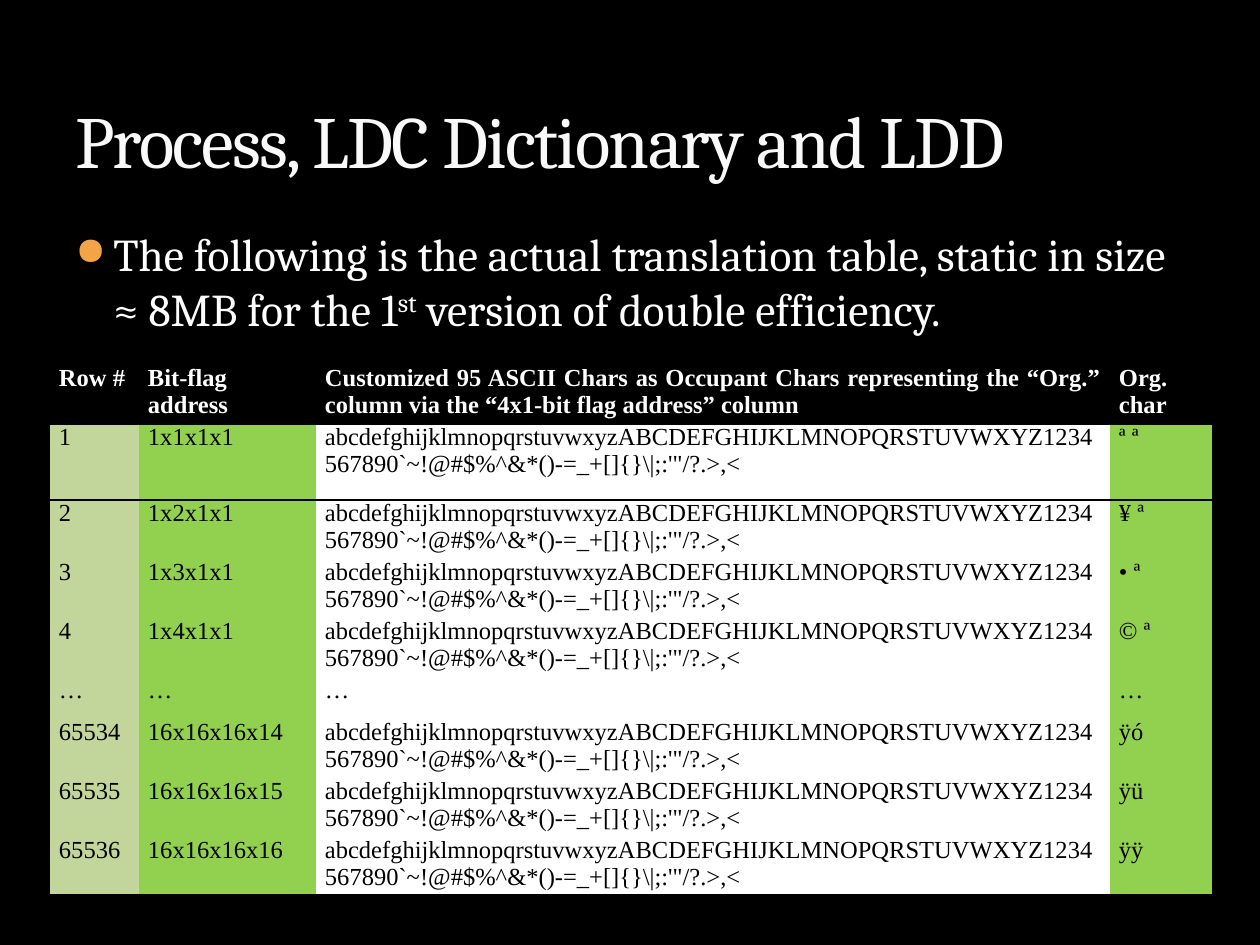
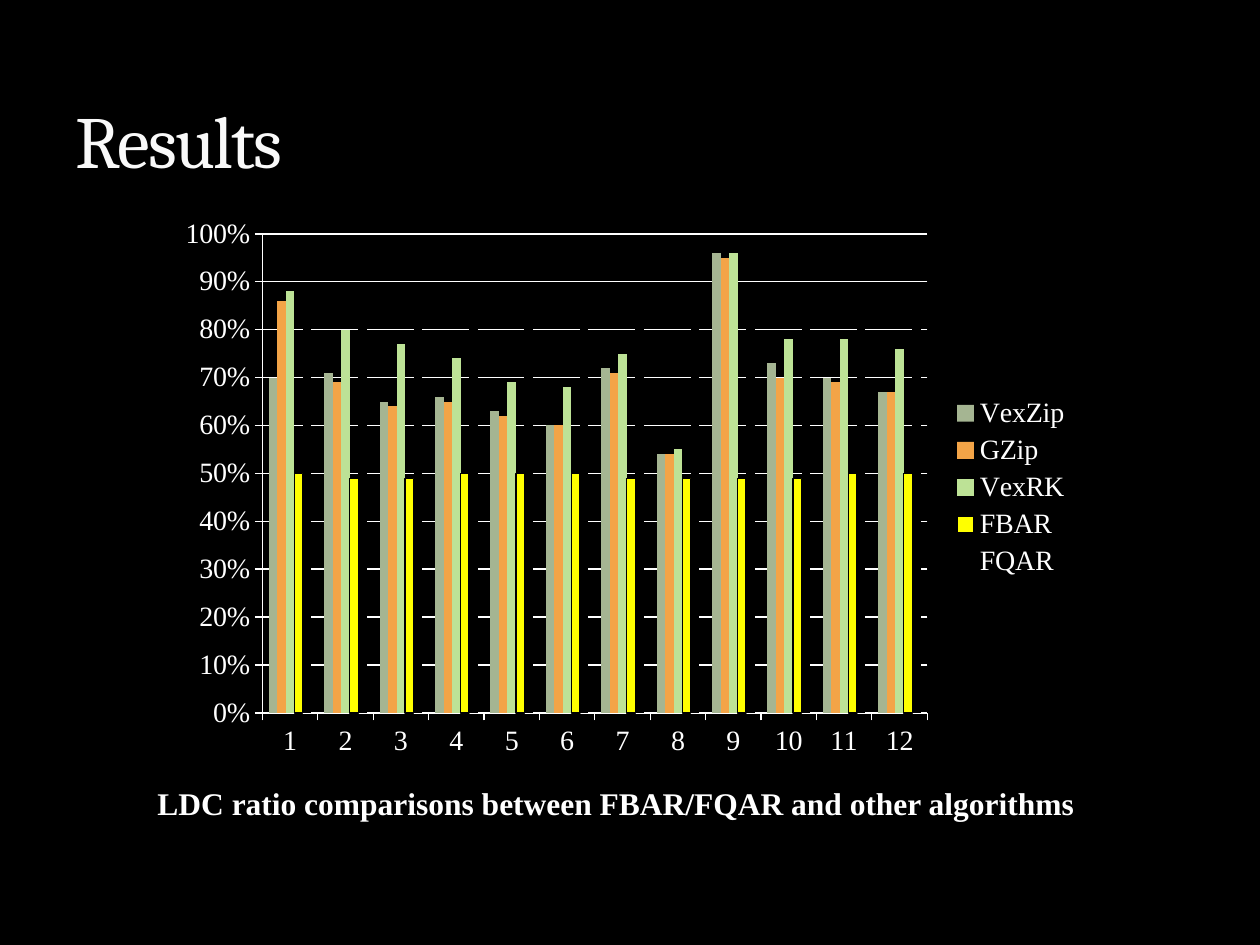
from lxml import etree
from pptx import Presentation
from pptx.chart.data import CategoryChartData
from pptx.dml.color import RGBColor
from pptx.enum.chart import XL_CHART_TYPE, XL_LEGEND_POSITION, XL_TICK_MARK
from pptx.enum.text import MSO_ANCHOR, PP_ALIGN
from pptx.oxml import parse_xml
from pptx.oxml.ns import nsdecls, qn
from pptx.util import Pt

SERIF, TIMES = "Cambria", "Times New Roman"
BLACK, WHITE, TITLE_COLOR, ACCENT = "000000", "FFFFFF", "F9F9F9", "F3A447"
TITLE_OUTLINE = "3C4422"
NO_STYLE = "{2D5ABB26-0587-4C30-8999-92F81FD0307C}"

TITLE_BOX = (63, 21, 1134, 168)
BODY_BOX = (63, 220, 1134, 686)
TABLE_POS = (50, 365)
CHART_BOX = (168, 207, 916, 561)
PLOT_BOX = (262, 234, 665, 479)
CAPTION_BOX = (88, 777, 1064, 51)

TABLE_TITLE = "Process, LDC Dictionary and LDD"
INTRO = [
    ("The following is the actual translation table, static in size ≈ 8MB for the 1", False),
    ("st", True),
    (" version of double efficiency.", False),
]
CHARS = ("abcdefghijklmnopqrstuvwxyzABCDEFGHIJKLMNOPQRSTUVWXYZ"
         "1234567890`~!@#$%^&*()-=_+[]{}\\|;:'\"/?.>,<")
HEADER = (
    "Row #",
    "Bit-flag address",
    "Customized 95 ASCII Chars as Occupant Chars representing the “Org.” column "
    "via the “4x1-bit flag address” column",
    "Org. char",
)
ROWS = [
    ("1", "1x1x1x1", CHARS, "ª ª"),
    ("2", "1x2x1x1", CHARS, "¥ ª"),
    ("3", "1x3x1x1", CHARS, "• ª"),
    ("4", "1x4x1x1", CHARS, "© ª"),
    ("…", "…", "…", "…"),
    ("65534", "16x16x16x14", CHARS, "ÿó"),
    ("65535", "16x16x16x15", CHARS, "ÿü"),
    ("65536", "16x16x16x16", CHARS, "ÿÿ"),
]
COL_WIDTHS = (89, 177, 794, 102)
COL_FILLS = ("C2D69B", "92D050", WHITE, "92D050")
ROW_HEIGHT, FIRST_ROW_HEIGHT = 42, 76

CHART_TITLE = "Results"
CAPTION = "LDC ratio comparisons between FBAR/FQAR and other algorithms "
SERIES = [
    ("VexZip", "A5B592", (0.7, 0.71, 0.65, 0.66, 0.63, 0.6, 0.72, 0.54, 0.96, 0.73, 0.7, 0.67)),
    ("GZip", ACCENT, (0.86, 0.69, 0.64, 0.65, 0.62, 0.6, 0.71, 0.54, 0.95, 0.7, 0.69, 0.67)),
    ("VexRK", "BDE296", (0.88, 0.8, 0.77, 0.74, 0.69, 0.68, 0.75, 0.55, 0.96, 0.78, 0.78, 0.76)),
    ("FBAR", "FFFF00", (0.5, 0.49, 0.49, 0.5, 0.5, 0.5, 0.49, 0.49, 0.49, 0.49, 0.5, 0.5)),
    ("FQAR", BLACK, (0.88, 0.87, 0.86, 0.88, 0.88, 0.88, 0.86, 0.87, 0.86, 0.86, 0.88, 0.88)),
]


def px(n):
    return round(n * 914400 / 126)


def rgb(color):
    return RGBColor.from_string(color)


def set_font(font, name, size, color, bold=False):
    font.name, font.size, font.bold = name, Pt(size), bold
    font.color.rgb = rgb(color)


def add_slide(prs, title):
    s = prs.slides.add_slide(prs.slide_layouts[6])
    s.background.fill.solid()
    s.background.fill.fore_color.rgb = rgb(BLACK)
    p = add_text(s, TITLE_BOX, [(title, False)], MSO_ANCHOR.BOTTOM)
    set_font(p.font, SERIF, 42, TITLE_COLOR)
    rPr = p.runs[0].font._element if hasattr(p.runs[0].font, "_element") else p.runs[0]._r.get_or_add_rPr()
    rPr.set("spc", "-100")
    rPr.insert(0, parse_xml(
        f'<a:ln {nsdecls("a")} w="3175"><a:solidFill><a:srgbClr val="{TITLE_OUTLINE}">'
        '<a:alpha val="25000"/></a:srgbClr></a:solidFill></a:ln>'))
    return s


def add_text(s, box, runs, anchor):
    tf = s.shapes.add_textbox(*map(px, box)).text_frame
    tf.word_wrap, tf.vertical_anchor = True, anchor
    p = tf.paragraphs[0]
    for text, raised in runs:
        r = p.add_run()
        r.text = text
        if raised:
            r._r.get_or_add_rPr().set("baseline", "30000")
    return p


def add_bullet(p, indent):
    pPr = p._p.get_or_add_pPr()
    pPr.set("marL", str(px(indent)))
    pPr.set("indent", str(-px(indent)))
    bullet = parse_xml(
        f'<a:pPr {nsdecls("a")}><a:buClr><a:srgbClr val="{ACCENT}"/></a:buClr>'
        '<a:buSzPct val="85000"/><a:buChar char="●"/></a:pPr>')
    defRPr = pPr.find(qn("a:defRPr"))
    for el in list(bullet):
        defRPr.addprevious(el)


def add_border(cell, sides):
    tcPr = cell._tc.get_or_add_tcPr()
    for side in sides:
        ln = etree.SubElement(tcPr, qn(f"a:ln{side}"), w="12700")
        fill = etree.SubElement(ln, qn("a:solidFill"))
        etree.SubElement(fill, qn("a:srgbClr"), val=BLACK)


def fill_cell(cell, text, fill, color, bold, sides):
    cell.margin_left = cell.margin_right = px(9)
    cell.margin_top = cell.margin_bottom = 0
    add_border(cell, sides)
    cell.fill.solid()
    cell.fill.fore_color.rgb = rgb(fill)
    p = cell.text_frame.paragraphs[0]
    p.text, p.alignment = text, PP_ALIGN.JUSTIFY
    set_font(p.font, TIMES, 14, color, bold)


def add_translation_table(s):
    heights = [ROW_HEIGHT, FIRST_ROW_HEIGHT] + [ROW_HEIGHT] * (len(ROWS) - 1)
    size = (sum(COL_WIDTHS), sum(heights))
    table = s.shapes.add_table(len(heights), len(COL_WIDTHS), *map(px, TABLE_POS + size)).table
    table.horz_banding = False
    table._tbl.tblPr.find(qn("a:tableStyleId")).text = NO_STYLE
    for column, width in zip(table.columns, COL_WIDTHS):
        column.width = px(width)
    for row, height in zip(table.rows, heights):
        row.height = px(height)
    for c, text in enumerate(HEADER):
        fill_cell(table.cell(0, c), text, BLACK, WHITE, True, "LRTB")
    for i, row in enumerate(ROWS, 1):
        sides = {1: "T", len(ROWS): "B"}.get(i, "")
        for c, (text, fill) in enumerate(zip(row, COL_FILLS)):
            fill_cell(table.cell(i, c), text, fill, BLACK, False, sides)


def place_plot(chart):
    left, top, width, height = CHART_BOX
    x, y, w, h = PLOT_BOX
    parts = {"x": (x - left) / width, "y": (y - top) / height, "w": w / width, "h": h / height}
    values = "".join(f'<c:{k} val="{v:.3f}"/>' for k, v in parts.items())
    plot_area = chart._chartSpace.chart.plotArea
    for old in plot_area.findall(qn("c:layout")):
        plot_area.remove(old)
    plot_area.insert(0, parse_xml(
        f'<c:layout {nsdecls("c")}><c:manualLayout><c:layoutTarget val="inner"/>'
        f'<c:xMode val="edge"/><c:yMode val="edge"/>{values}</c:manualLayout></c:layout>'))


def add_ratio_chart(s):
    data = CategoryChartData(number_format="0.00%")
    data.categories = [str(n) for n in range(1, 13)]
    for name, _, values in SERIES:
        data.add_series(name, values)
    chart = s.shapes.add_chart(XL_CHART_TYPE.COLUMN_CLUSTERED, *map(px, CHART_BOX), data).chart
    set_font(chart.font, TIMES, 16, WHITE)
    chart.has_title = False
    chart.has_legend = True
    chart.legend.position = XL_LEGEND_POSITION.RIGHT
    chart.legend.include_in_layout = False
    plot = chart.plots[0]
    plot.vary_by_categories, plot.gap_width, plot.overlap = False, 150, 0
    for series, (name, color, _) in zip(plot.series, SERIES):
        series.invert_if_negative = False
        series.format.fill.solid()
        series.format.fill.fore_color.rgb = rgb(color)
        if name == "FBAR":
            series.format.line.color.rgb = rgb(BLACK)
            series.format.line.width = Pt(0.75)
    axis = chart.value_axis
    axis.minimum_scale, axis.maximum_scale, axis.major_unit = 0, 1, 0.1
    axis.tick_labels.number_format = "0%"
    axis.tick_labels.number_format_is_linked = False
    axis.has_major_gridlines = True
    for line in (axis.major_gridlines.format.line, axis.format.line, chart.category_axis.format.line):
        line.color.rgb = rgb(WHITE)
        line.width = Pt(0.75)
    for ax in (axis, chart.category_axis):
        ax.major_tick_mark = XL_TICK_MARK.OUTSIDE
    place_plot(chart)


def main():
    prs = Presentation()
    prs.slide_width, prs.slide_height = px(1260), px(945)

    s = add_slide(prs, TABLE_TITLE)
    p = add_text(s, BODY_BOX, INTRO, MSO_ANCHOR.TOP)
    p.space_before = Pt(6)
    set_font(p.font, SERIF, 26, WHITE)
    add_bullet(p, 38)
    add_translation_table(s)

    s = add_slide(prs, CHART_TITLE)
    add_ratio_chart(s)
    p = add_text(s, CAPTION_BOX, [(CAPTION, False)], MSO_ANCHOR.MIDDLE)
    p.alignment = PP_ALIGN.CENTER
    set_font(p.font, TIMES, 18, WHITE, True)

    prs.save("out.pptx")


if __name__ == "__main__":
    main()
